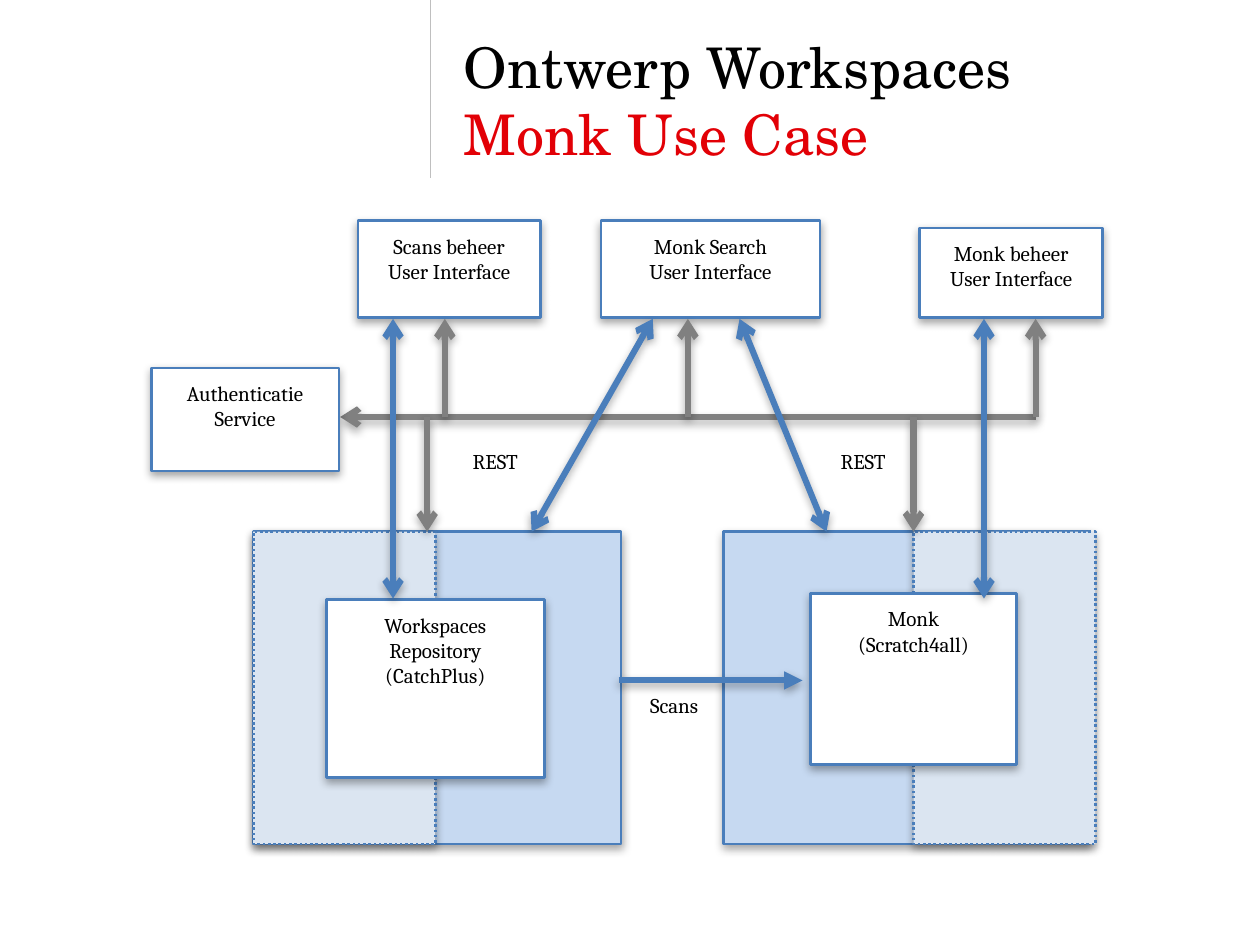
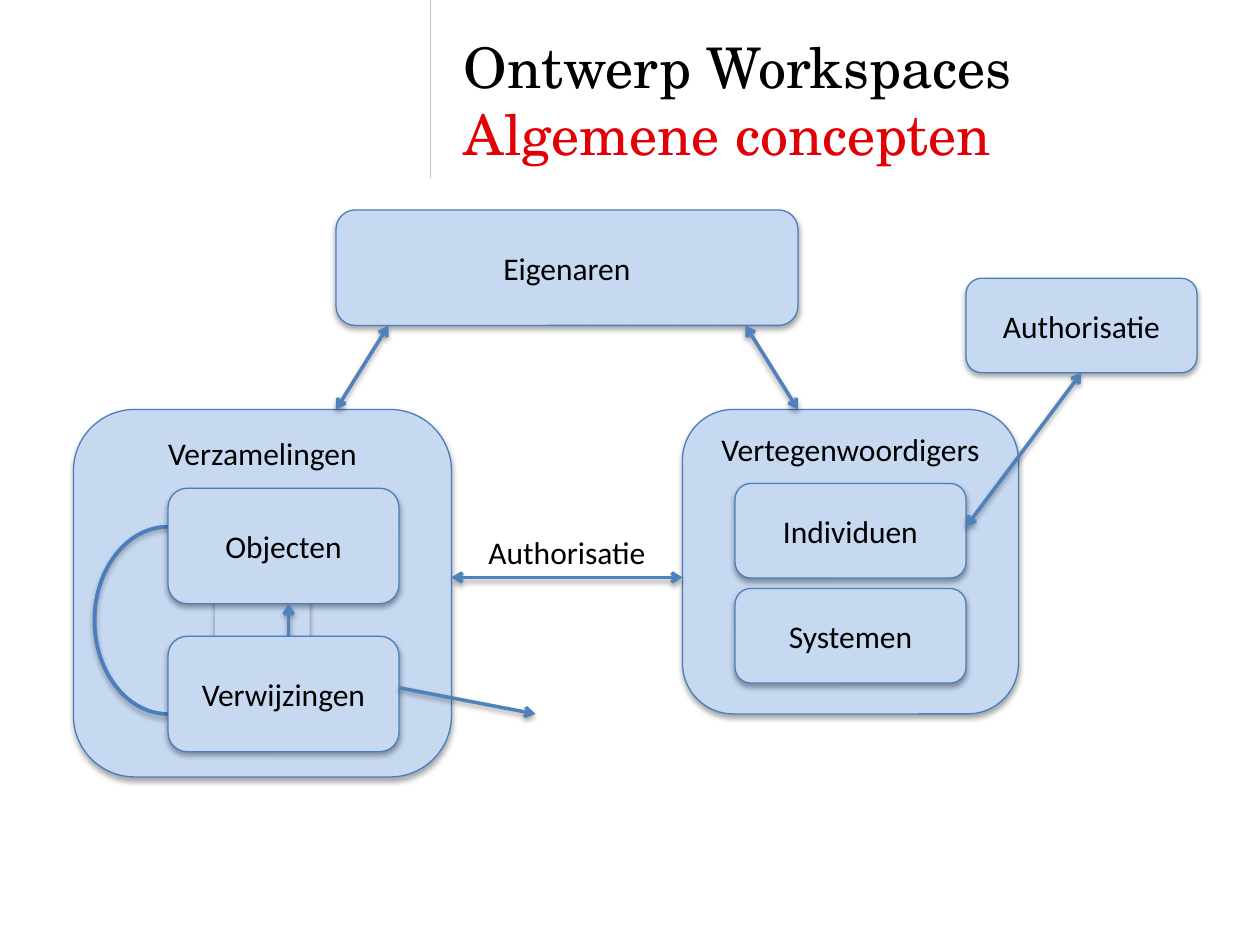
"""Build two slides on the design of Workspaces: the Monk use case and the general concepts."""
from dataclasses import dataclass

from lxml.etree import SubElement
from pptx import Presentation
from pptx.dml.color import RGBColor
from pptx.enum.dml import MSO_LINE
from pptx.enum.shapes import MSO_CONNECTOR, MSO_SHAPE
from pptx.enum.text import MSO_ANCHOR, PP_ALIGN
from pptx.oxml.ns import qn
from pptx.util import Pt

COLORS = {
    "black": "000000",
    "white": "FFFFFF",
    "red": "E20006",
    "rule": "BFBFBF",
    "gray": "808080",
    "panel": "C6D9F1",
    "pale": "DBE5F1",
    "flow": "4A7EBB",
    "outline": "4B7EBC",
    "link": "4F81BD",
}


def rgb(name):
    return RGBColor.from_string(COLORS[name])


@dataclass
class Style:
    font: str
    size: float
    outline: str
    outline_width: float
    arrow: str
    arrow_width: float
    blur: float
    distance: float
    inset: float


ARCHITECTURE = Style("Cambria", 12, "flow", 1.5, "flow", 3.5, 5, 2.1, 7.2)
CONCEPTS = Style("Calibri", 18, "outline", 0.75, "link", 2, 3.1, 1.8, 3.6)


class DiagramPage:
    def __init__(self, deck, style, topic):
        self.style = style
        self.page = deck.slides.add_slide(deck.slide_layouts[6])
        self.line((246, 0), (246, 102), "rule", 1, shadow=False)
        self.title("Ontwerp Workspaces", topic)

    def title(self, subject, topic):
        box = self.page.shapes.add_textbox(Pt(258), Pt(12), Pt(426), Pt(90))
        self.set_text(box, f"{subject}\n{topic}", MSO_ANCHOR.MIDDLE, PP_ALIGN.LEFT, "TeX Gyre Schola", 32)
        box.text_frame.paragraphs[1].runs[0].font.color.rgb = rgb("red")

    def set_text(self, box, text, anchor, align=PP_ALIGN.CENTER, font=None, size=None):
        frame = box.text_frame
        frame.word_wrap = True
        frame.vertical_anchor = anchor
        frame.margin_left = frame.margin_right = Pt(7.2)
        frame.margin_top = frame.margin_bottom = Pt(self.style.inset)
        frame.text = text
        for para in frame.paragraphs:
            para.alignment = align
            for span in para.runs:
                span.font.name = font or self.style.font
                span.font.size = Pt(size or self.style.size)
                span.font.color.rgb = rgb("black")

    def effects(self, item, shadow=True):
        effects = SubElement(item.element.spPr, qn("a:effectLst"))
        if shadow:
            outer = SubElement(effects, qn("a:outerShdw"), blurRad=str(Pt(self.style.blur)),
                               dist=str(Pt(self.style.distance)), dir="5400000", rotWithShape="0")
            color = SubElement(outer, qn("a:srgbClr"), val=COLORS["black"])
            SubElement(color, qn("a:alpha"), val="35000")

    def shape(self, kind, left, top, width, height, fill=None, outline=True, line_width=None, dotted=False):
        box = self.page.shapes.add_shape(kind, Pt(left), Pt(top), Pt(width), Pt(height))
        if fill:
            box.fill.solid()
            box.fill.fore_color.rgb = rgb(fill)
        else:
            box.fill.background()
        if outline:
            box.line.color.rgb = rgb(self.style.outline)
            box.line.width = Pt(line_width or self.style.outline_width)
            if dotted:
                box.line.dash_style = MSO_LINE.ROUND_DOT
        else:
            box.line.fill.background()
        self.effects(box)
        return box

    def panel(self, *place, fill="panel", dotted=False):
        self.shape(MSO_SHAPE.RECTANGLE, *place, fill=fill, dotted=dotted)

    def component(self, text, *place):
        box = self.shape(MSO_SHAPE.RECTANGLE, *place, fill="white")
        self.set_text(box, text, MSO_ANCHOR.TOP)

    def concept(self, text, *place, anchor=MSO_ANCHOR.MIDDLE):
        box = self.shape(MSO_SHAPE.ROUNDED_RECTANGLE, *place, fill="panel")
        self.set_text(box, text, anchor)

    def label(self, text, left, top, width=63.4, height=39.6):
        box = self.page.shapes.add_textbox(Pt(left), Pt(top), Pt(width), Pt(height))
        self.set_text(box, text, MSO_ANCHOR.TOP)

    def line(self, start, end, color=None, width=None, head=None, tail=None, shadow=True):
        line = self.page.shapes.add_connector(
            MSO_CONNECTOR.STRAIGHT, *(Pt(value) for value in (*start, *end)))
        line.line.color.rgb = rgb(color or self.style.arrow)
        line.line.width = Pt(width or self.style.arrow_width)
        outline = line.element.spPr.find(qn("a:ln"))
        for tag, tip in (("a:headEnd", head), ("a:tailEnd", tail)):
            if tip:
                SubElement(outline, qn(tag), type=tip)
        self.effects(line, shadow)

    def exchange(self, start, end):
        self.line(start, end, head="arrow", tail="arrow")


def use_case(deck):
    page = DiagramPage(deck, ARCHITECTURE, "Monk Use Case")
    bus, interface_bottom, panel_top, panel_height = 238.3, 182.2, 303.8, 178.6

    page.line((194.4, bus), (591.8, bus), "gray", head="arrow")
    for left, width in ((144.7, 210.2), (413.3, 209.5)):
        page.panel(left, panel_top, width, panel_height)
    for left in (144.7, 522):
        page.panel(left, panel_top, 104, panel_height, fill="pale", dotted=True)

    page.component("Workspaces\nRepository\n(CatchPlus)", 186.5, 342.7, 124.6, 101.5)
    page.component("Monk\n(Scratch4all)", 463, 339.1, 118, 97.9)
    page.component("Authenticatie\nService", 86.4, 210.2, 107.3, 59)
    page.line((353.5, 388.8), (458.6, 388.8), tail="triangle")
    page.label("Scans", 353.5, 388.8)

    page.component("Monk beheer\nUser Interface", 525.6, 130.3, 104.4, 51.1)
    page.component("Monk Search\nUser Interface", 343.4, 126, 125.3, 55.4)
    page.component("Scans beheer\nUser Interface", 204.5, 126, 104.4, 55.4)
    for bottom, top in ((472.3, 422.6), (303.8, 373)):
        page.exchange((bottom, panel_top), (top, interface_bottom))
    for x in (224.6, 562.3):
        page.exchange((x, 342), (x, interface_bottom))
    for left in (251.3, 461.5):
        page.label("REST", left, 249.1)

    for x in (591.8, 393.1, 254.2):
        page.line((x, interface_bottom), (x, bus), "gray", head="arrow")
    for x in (522, 244.1):
        page.line((x, panel_top), (x, bus), "gray", head="arrow")


def concepts(deck):
    page = DiagramPage(deck, CONCEPTS, "Algemene concepten")
    page.concept("Verzamelingen", 42, 234, 216, 210, anchor=MSO_ANCHOR.TOP)
    page.concept("Eigenaren", 192, 120, 264, 66)
    page.concept("Vertegenwoordigers", 390, 234, 192, 174, anchor=MSO_ANCHOR.TOP)
    for text, left, top in (("Individuen", 420, 276.3), ("Systemen", 420, 336.3), ("Authorisatie", 552, 159)):
        page.concept(text, left, top, 132, 54)

    page.exchange((222, 186), (192, 234))
    page.exchange((426, 186), (456, 234))
    page.exchange((390, 330), (258, 330))
    page.exchange((618, 213), (552, 301))
    page.label("Authorisatie", 264, 301, 120, 29)

    loop = page.shape(MSO_SHAPE.DONUT, 54, 301, 84, 107, line_width=2)
    loop.adjustments[0] = 0
    page.shape(MSO_SHAPE.RECTANGLE, 123, 336, 54, 36, fill="panel", outline=False)
    page.concept("Objecten", 96, 279, 132, 66)
    page.line((165, 366), (165, 345), tail="arrow")
    page.concept("Verwijzingen", 96, 363.6, 132, 66)
    page.line((228, 393), (306, 408), tail="arrow")


def main():
    deck = Presentation()
    deck.slide_width, deck.slide_height = Pt(720), Pt(540)
    use_case(deck)
    concepts(deck)
    deck.save("out.pptx")


if __name__ == "__main__":
    main()
